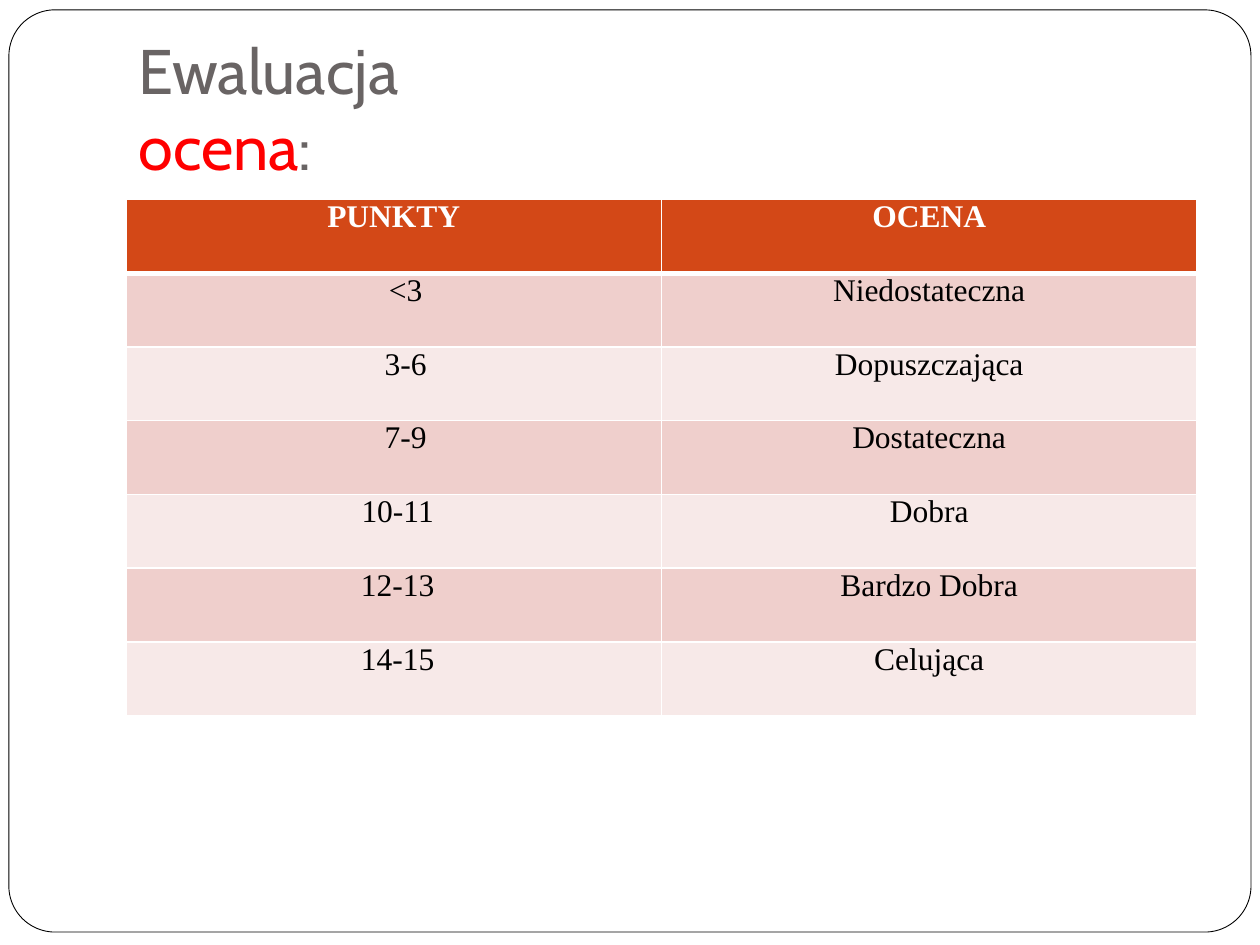
from lxml.etree import SubElement as Sub
from pptx import Presentation
from pptx.dml.color import RGBColor as Rgb
from pptx.enum.shapes import MSO_SHAPE as Shape
from pptx.enum.text import MSO_ANCHOR as Anchor, PP_ALIGN as Align
from pptx.oxml.ns import qn
from pptx.util import Cm, Pt

GRADES = [
    ("PUNKTY", "OCENA", 0),
    ("<3", "Niedostateczna", 3),
    ("3-6", "Dopuszczająca", 3),
    ("7-9", "Dostateczna", 3),
    ("10-11", "Dobra", 1),
    ("12-13", "Bardzo Dobra", 1),
    ("14-15", "Celująca", 1),
]
HEAD, BANDS = "D34817", ("F7E9E8", "EFCFCC")
SPACE = 0.16


def tint(code):
    """Return the colour for a hex string."""
    return Rgb.from_string(code)


def apply(item, form):
    """Set each attribute in form on item."""
    for name, value in form.items():
        setattr(item, name, value)


def paint(item, code):
    """Give item a solid fill."""
    item.fill.solid()
    item.fill.fore_color.rgb = tint(code)


def write(para, text, code, form):
    """Add a run of text to a paragraph."""
    run = para.add_run()
    run.text = text
    apply(run.font, form)
    run.font.color.rgb = tint(code)


def add_frame(slide):
    """Draw the rounded border of the slide."""
    frame = slide.shapes.add_shape(
        Shape.ROUNDED_RECTANGLE, Cm(0.18), Cm(0.2), Cm(25.04), Cm(18.59))
    frame.adjustments[0] = 0.05
    frame.shadow.inherit = False
    paint(frame, "FFFFFF")
    frame.line.color.rgb = tint("000000")
    frame.line.width = Pt(0.5)


def add_title(slide):
    """Write the two-line title."""
    box = slide.shapes.add_textbox(Cm(2.54), Cm(0.76), Cm(21.59), Cm(3.18))
    apply(box.text_frame, {
        "word_wrap": True, "vertical_anchor": Anchor.BOTTOM,
        "margin_left": Cm(0.25), "margin_right": Cm(0.25),
        "margin_top": Cm(0.13), "margin_bottom": Cm(0.25)})
    para = box.text_frame.paragraphs[0]
    form = {"name": "Cabin", "size": Pt(36)}
    write(para, "Ewaluacja", "696464", form)
    para.add_line_break()
    write(para, "ocena", "FF0000", form)
    write(para, ":", "696464", form)


def add_edges(cell, base):
    """Draw white borders, the bottom one with its own width."""
    props = cell._tc.get_or_add_tcPr()
    for side, width in {"L": 1, "R": 1, "T": 1, "B": base}.items():
        line = Sub(props, qn(f"a:ln{side}"), w=str(Pt(width)))
        Sub(Sub(line, qn("a:solidFill")), qn("a:srgbClr"), val="FFFFFF")


def fill_cell(cell, text, row, shift):
    """Format one cell, its text moved right by shift."""
    head = row == 0
    apply(cell, {"margin_left": Cm(0.18 + shift), "margin_right": Cm(0.18),
                 "margin_top": 0, "margin_bottom": 0})
    add_edges(cell, 3 if head else 1)
    paint(cell, HEAD if head else BANDS[row % 2])
    para = cell.text_frame.paragraphs[0]
    para.alignment = Align.CENTER
    write(para, text, "FFFFFF" if head else "000000",
          {"name": "Times New Roman", "size": Pt(18), "bold": head})


def add_grades(slide):
    """Build the table of points and grades."""
    table = slide.shapes.add_table(
        len(GRADES), 2, Cm(2.54), Cm(4.02), Cm(21.59), Cm(10.41)).table
    for row, (points, grade, spaces) in enumerate(GRADES):
        fill_cell(table.cell(row, 0), points, row, spaces * SPACE)
        fill_cell(table.cell(row, 1), grade, row, 0)


def main():
    """Build and save the slide."""
    deck = Presentation()
    apply(deck, {"slide_width": Cm(25.4), "slide_height": Cm(19.05)})
    slide = deck.slides.add_slide(deck.slide_layouts[6])
    add_frame(slide)
    add_title(slide)
    add_grades(slide)
    deck.save("out.pptx")


if __name__ == "__main__":
    main()
